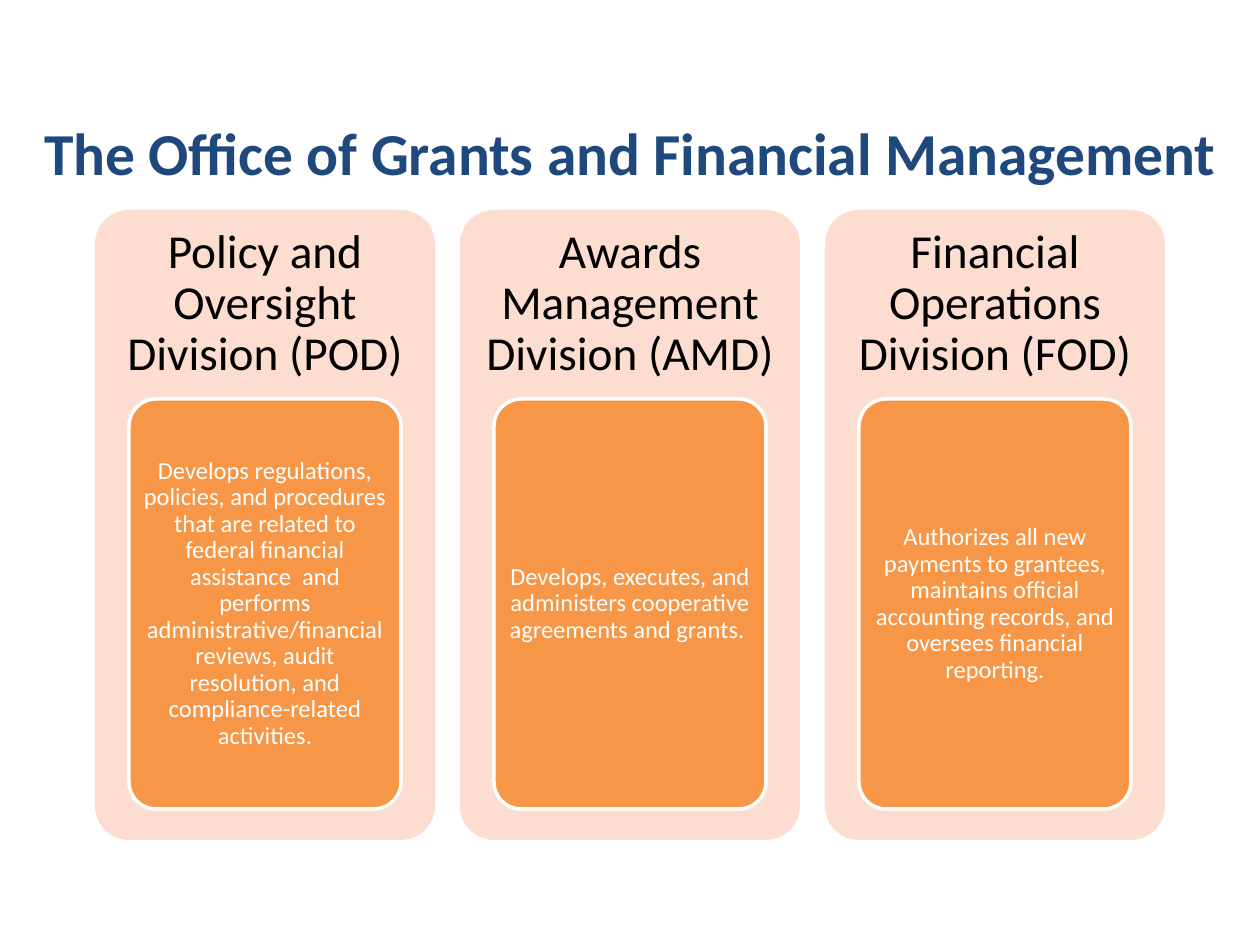
import pptx
import pptx.dml.color
import pptx.enum.shapes
import pptx.enum.text
import pptx.util

SCALE = 914400 / 126
THEME = {
    "font": "Calibri",
    "title": "1F497D",
    "card": "FCDDCF",
    "panel": "F79646",
    "heading": "000000",
    "light": "FFFFFF",
    "title_size": 34,
    "heading_size": 27,
    "body_size": 14,
}


def px(*lengths):
    return [pptx.util.Emu(round(length * SCALE)) for length in lengths]


def write(shape, text, size, color, inset_x, inset_y, line_spacing=0.9, bold=False):
    frame = shape.text_frame
    frame.text = text
    frame.word_wrap = True
    frame.auto_size = pptx.enum.text.MSO_AUTO_SIZE.NONE
    frame.vertical_anchor = pptx.enum.text.MSO_ANCHOR.MIDDLE
    frame.margin_left, frame.margin_right = px(inset_x, inset_x)
    frame.margin_top, frame.margin_bottom = px(inset_y, inset_y)
    paragraph = frame.paragraphs[0]
    paragraph.alignment = pptx.enum.text.PP_ALIGN.CENTER
    paragraph.line_spacing = line_spacing
    paragraph.font.name = THEME["font"]
    paragraph.font.size = pptx.util.Pt(THEME[size])
    paragraph.font.bold = bold
    paragraph.font.color.rgb = pptx.dml.color.RGBColor.from_string(THEME[color])


presentation = pptx.Presentation()
presentation.slide_width, presentation.slide_height = px(1260, 945)
slide = presentation.slides.add_slide(presentation.slide_layouts[5])

title = slide.shapes.title
title.left, title.top, title.width, title.height = px(0, 73, 1260, 158)
write(title, "The Office of Grants and Financial Management",
      "title_size", "title", 12, 6, line_spacing=1.0, bold=True)

divisions = [
    ("Policy and Oversight Division (POD)",
     "Develops regulations, policies, and procedures that are related to federal "
     "financial assistance  and performs administrative/financial reviews, audit "
     "resolution, and compliance-related activities."),
    ("Awards Management Division (AMD)",
     "Develops, executes, and administers cooperative agreements and grants. "),
    ("Financial Operations Division (FOD)",
     "Authorizes all new payments to grantees, maintains official accounting "
     "records, and oversees financial reporting."),
]

rounded = pptx.enum.shapes.MSO_SHAPE.ROUNDED_RECTANGLE
card_width, card_gap, card_top = 340, 25, 210
panel_inset, heading_height = 34, 189
row_width = len(divisions) * (card_width + card_gap) - card_gap
first_left = (1260 - row_width) // 2

for index, (heading, duties) in enumerate(divisions):
    left = first_left + index * (card_width + card_gap)

    card = slide.shapes.add_shape(rounded, *px(left, card_top, card_width, 630))
    card.line.fill.background()

    label = slide.shapes.add_textbox(*px(left, card_top, card_width, heading_height))
    write(label, heading, "heading_size", "heading", 14, 14)

    panel = slide.shapes.add_shape(rounded, *px(
        left + panel_inset, card_top + heading_height, card_width - 2 * panel_inset, 410))
    panel.line.color.rgb = pptx.dml.color.RGBColor.from_string(THEME["light"])
    panel.line.width = pptx.util.Pt(2)
    write(panel, duties, "body_size", "light", 5, 4)

    for shape, color in ((card, "card"), (panel, "panel")):
        shape.adjustments[0] = 0.1
        shape.shadow.inherit = False
        shape.fill.solid()
        shape.fill.fore_color.rgb = pptx.dml.color.RGBColor.from_string(THEME[color])

presentation.save("out.pptx")
